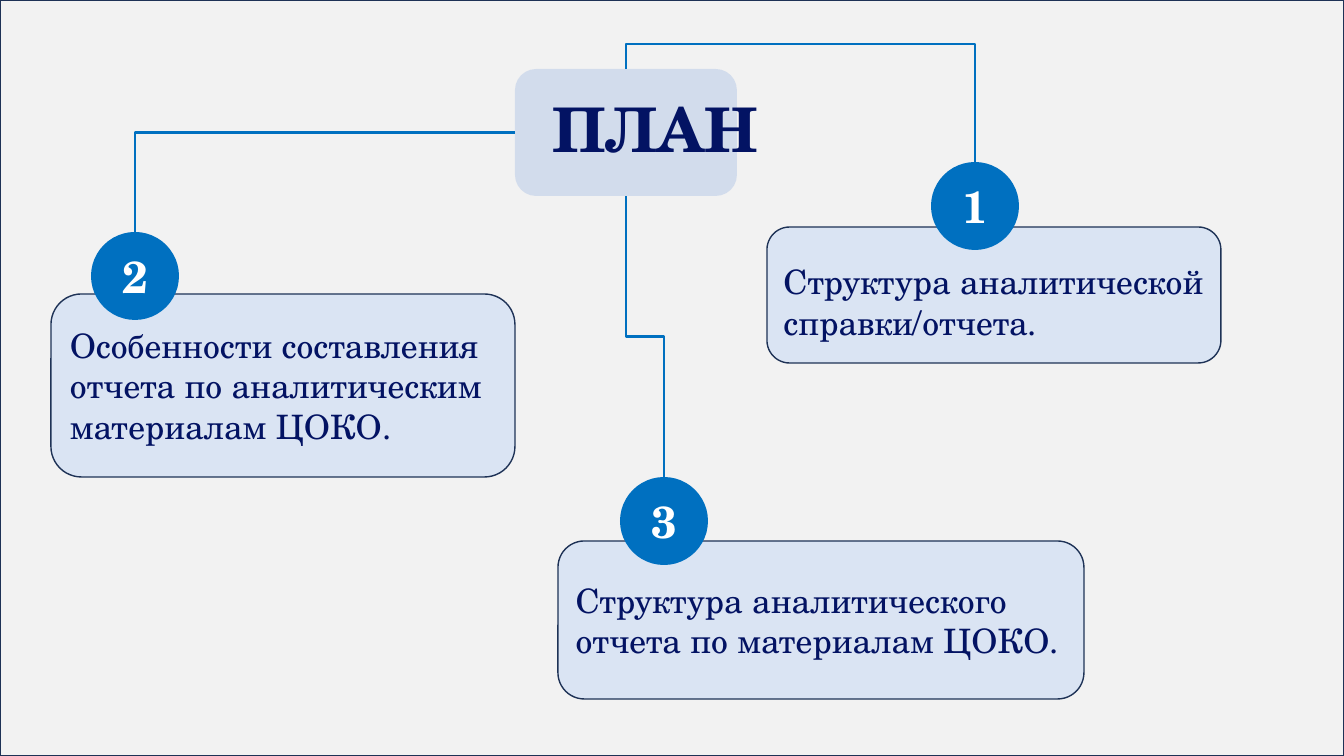
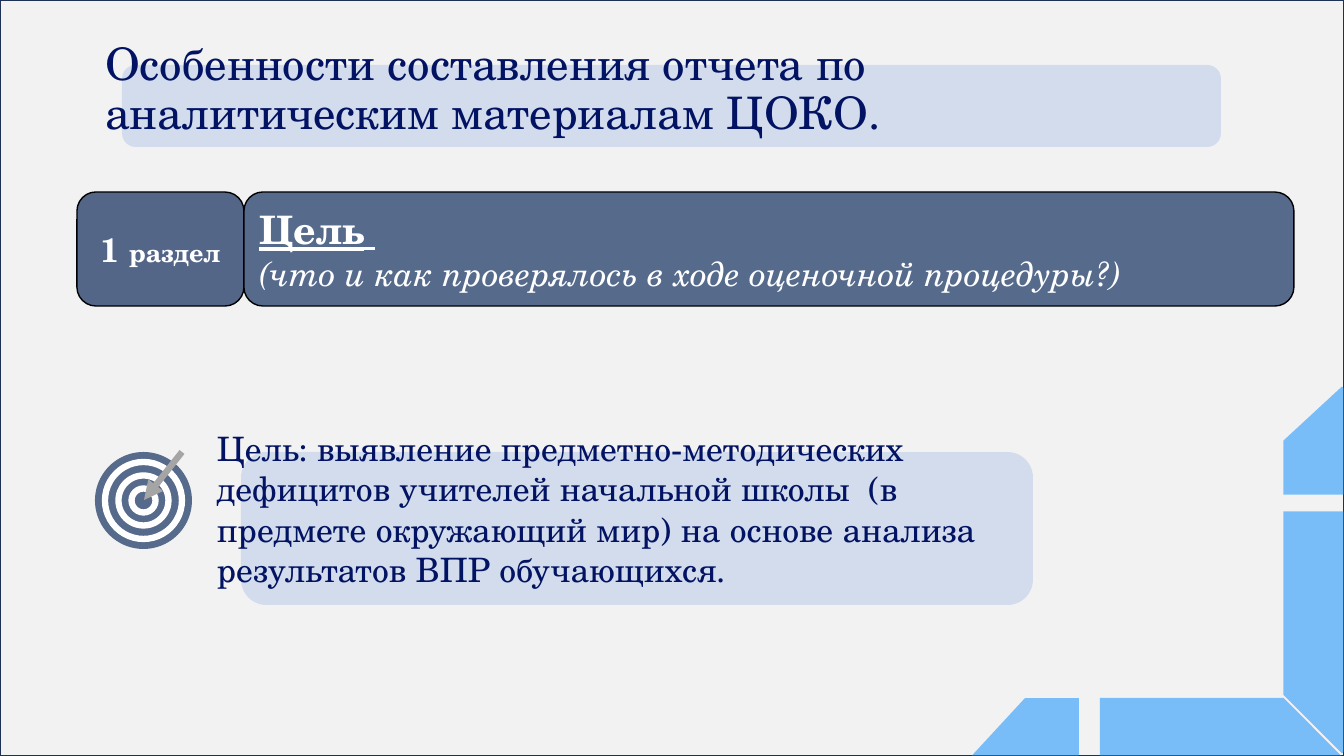
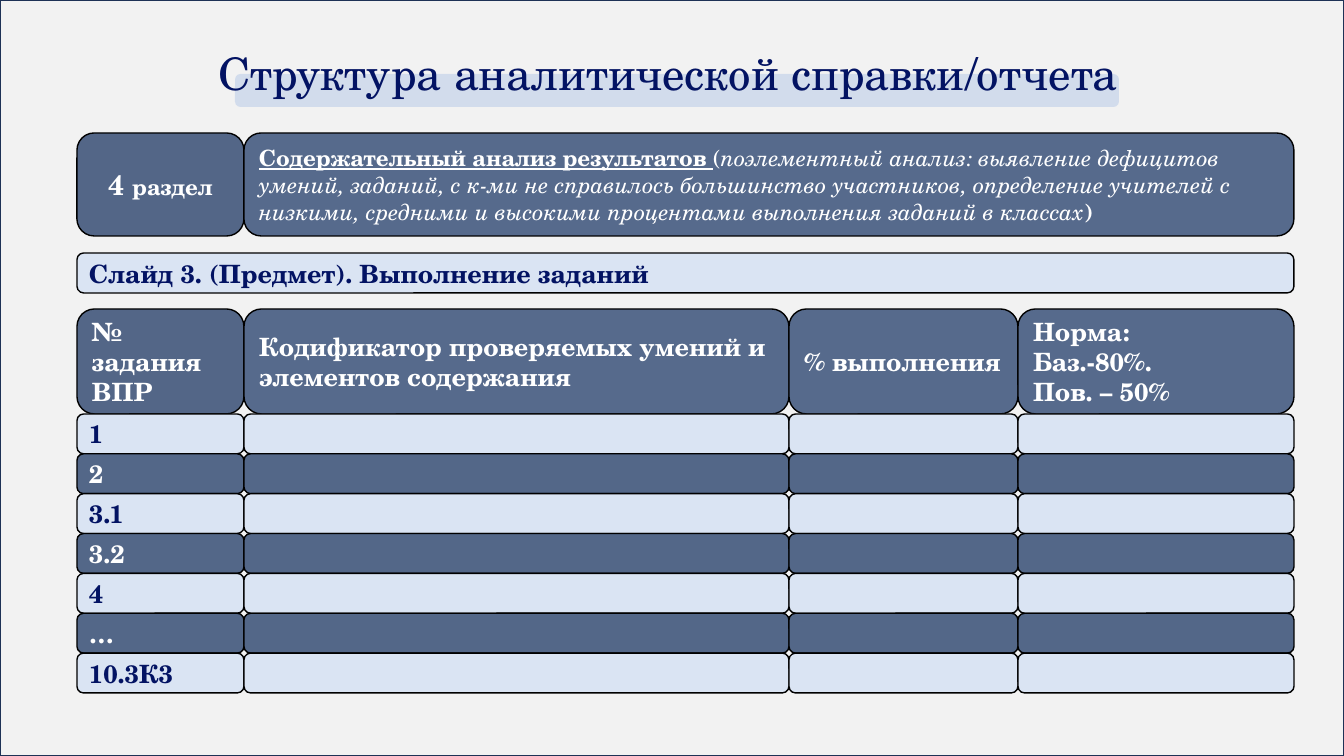
from itertools import pairwise

from lxml.etree import SubElement
from pptx import Presentation
from pptx.dml.color import RGBColor
from pptx.enum.shapes import MSO_CONNECTOR as CONNECTOR, MSO_SHAPE as SHAPE
from pptx.enum.text import MSO_ANCHOR as ANCHOR, MSO_AUTO_SIZE as AUTO_SIZE, PP_ALIGN as ALIGN
from pptx.oxml.ns import qn
from pptx.util import Emu, Pt

PAGE_WIDTH, PAGE_HEIGHT = 1344, 756
EMU_PER_PX = 12192000 / PAGE_WIDTH
FONT = "TeX Gyre Schola"
COLORS = {
    "page": "F2F2F2",
    "frame": "1E3256",
    "band": "B4C7E7",
    "ink": "031363",
    "white": "FFFFFF",
    "black": "000000",
    "blue": "0070C0",
    "corner": "008AFF",
    "pale": "DAE4F3",
    "slate": "566A8C",
    "slate_row": "536788",
    "navy": "1E3864",
    "arrow": "A5A5A5",
}
COLUMN_EDGES = (77, 244, 789, 1018, 1294)


def px(value):
    return Emu(round(value * EMU_PER_PX))


def rgb(name):
    return RGBColor.from_string(COLORS[name])


def write(shape, paragraphs, size=18, color="ink", bold=False, italic=False,
          underline=False, align=ALIGN.LEFT, anchor=ANCHOR.MIDDLE,
          spacing=None, margin_top=5):
    """A paragraph is a string or a list of (text, format changes) runs."""
    frame = shape.text_frame
    frame.word_wrap = True
    frame.auto_size = AUTO_SIZE.NONE
    frame.vertical_anchor = anchor
    frame.margin_top = px(margin_top)
    base = dict(size=size, color=color, bold=bold, italic=italic, underline=underline)
    for index, runs in enumerate(paragraphs):
        paragraph = frame.add_paragraph() if index else frame.paragraphs[0]
        paragraph.alignment = align
        if spacing:
            paragraph.line_spacing = spacing
        for text, changes in [(runs, {})] if isinstance(runs, str) else runs:
            style = base | changes
            run = paragraph.add_run()
            run.text = text
            font = run.font
            font.name = FONT
            font.size = Pt(style["size"])
            font.color.rgb = rgb(style["color"])
            font.bold = style["bold"]
            font.italic = style["italic"]
            font.underline = style["underline"]


def add_box(parent, box, fill=None, line=None, kind=SHAPE.ROUNDED_RECTANGLE,
            opacity=100, line_width=1, rotation=0):
    shape = parent.shapes.add_shape(kind, *map(px, box))
    shape.shadow.inherit = False
    shape.rotation = rotation
    if fill:
        shape.fill.solid()
        shape.fill.fore_color.rgb = rgb(fill)
        if opacity < 100:
            color = shape.element.spPr.find(qn("a:solidFill"))[0]
            SubElement(color, qn("a:alpha"), val=str(opacity * 1000))
    else:
        shape.fill.background()
    if line:
        shape.line.color.rgb = rgb(line)
        shape.line.width = Pt(line_width)
    else:
        shape.line.fill.background()
    return shape


def style_connector(connector, color, width):
    connector.line.color.rgb = rgb(color)
    connector.line.width = Pt(width)
    SubElement(connector.element.spPr, qn("a:effectLst"))


def add_elbow(slide, hub, site, badge, bend=None):
    """Join a side of the hub to the top of a badge; bend is a share of the height."""
    connector = slide.shapes.add_connector(CONNECTOR.ELBOW, 0, 0, 0, 0)
    connector.begin_connect(hub, site)
    connector.end_connect(badge, 0)
    left, top = connector.left, connector.top
    width, height = connector.width, connector.height
    properties = connector.element.spPr
    transform = properties.find(qn("a:xfrm"))
    geometry = properties.find(qn("a:prstGeom"))
    for flip in ("flipH", "flipV"):
        transform.attrib.pop(flip, None)
    if bend is None:
        geometry.set("prst", "bentConnector2")
        transform.set("rot", str(180 * 60000))
        transform.set("flipV", "1")
    else:
        connector.left = Emu(left + (width - height) // 2)
        connector.top = Emu(top + (height - width) // 2)
        connector.width, connector.height = height, width
        transform.set("rot", str(270 * 60000))
        transform.set("flipH", "1")
        SubElement(geometry.find(qn("a:avLst")), qn("a:gd"),
                   name="adj1", fmla=f"val {round(bend * 100000)}")
    style_connector(connector, "blue", 1.5)


def new_slide(presentation, band):
    slide = presentation.slides.add_slide(presentation.slide_layouts[5])
    add_box(slide, (0, 0, PAGE_WIDTH, PAGE_HEIGHT), "page", "frame", SHAPE.RECTANGLE)
    hub = add_box(slide, band, "band", opacity=50)
    return slide, hub


def set_title(slide, box, text, size=32, bold=False):
    title = slide.shapes.title
    title.element.getparent().append(title.element)
    title.left, title.top, title.width, title.height = map(px, box)
    write(title, [text], size=size, bold=bold, spacing=0.9)


def add_section_header(slide, top, height, number, number_size, word_size, paragraphs, size):
    left, middle, *_, right = COLUMN_EDGES
    label = add_box(slide, (left, top, middle - left, height), "navy", "black", opacity=75)
    write(label, [[(f"{number} ", {}), ("раздел", {"size": word_size})]],
          size=number_size, color="white", bold=True, align=ALIGN.CENTER)
    body = add_box(slide, (middle, top, right - middle, height), "slate", "black")
    write(body, paragraphs, size=size, color="white")


def add_target(slide, left, top, size):
    target = slide.shapes.add_group_shape()
    add_box(target, (left, top, size, size), "slate", kind=SHAPE.OVAL)
    for diameter in (77, 50, 24):
        inset = (size - diameter) / 2
        add_box(target, (left + inset, top + inset, diameter, diameter),
                line="white", kind=SHAPE.OVAL, line_width=4.5)
    arrow = slide.shapes.add_connector(
        CONNECTOR.STRAIGHT, px(left + 87), px(top), px(left + 49), px(top + 48))
    style_connector(arrow, "arrow", 4.5)
    SubElement(arrow.line._get_or_add_ln(), qn("a:tailEnd"), type="triangle")


def add_corner(slide):
    """Arrow-shaped plates that run off the bottom right corner."""
    thickness = 117
    for left, top, length, rotation in (
            (1221, 574, 242, 90), (1100, 698, 242, 0),
            (971, 698, 108, 180), (1288, 382, 108, 270)):
        add_box(slide, (left, top, length, thickness), "corner", kind=SHAPE.PENTAGON,
                opacity=50, rotation=rotation)


def add_task_grid(slide, top, header_height, height, headers, labels):
    columns = [(left, right - left) for left, right in pairwise(COLUMN_EDGES)]
    for index, ((left, width), lines) in enumerate(zip(columns, headers)):
        fill, opacity = ("slate", 100) if index else ("navy", 75)
        cell = add_box(slide, (left, top, width, header_height), fill, "black", opacity=opacity)
        write(cell, lines, color="white", bold=True)
    row_height = (height - header_height) / len(labels)
    for row, label in enumerate(labels):
        fill, color = ("slate_row", "white") if row % 2 else ("pale", "ink")
        row_top = top + header_height + row * row_height
        for column, (left, width) in enumerate(columns):
            cell = add_box(slide, (left, row_top, width, row_height), fill, "black")
            if column == 0:
                write(cell, [label], color=color, bold=True)


def build_plan(presentation):
    slide, hub = new_slide(presentation, (515, 69, 222, 127))
    set_title(slide, (542, 59, 243, 147), "ПЛАН", size=44, bold=True)
    topics = (
        ("2", "Особенности составления отчета по аналитическим материалам ЦОКО.",
         (51, 294, 464, 183), (91, 232), 5, 1, None),
        ("3", "Структура аналитического отчета по материалам ЦОКО.",
         (558, 541, 526, 158), (620, 477), 5, 2, 0.5),
        ("1", "Структура аналитической справки/отчета.",
         (767, 227, 454, 136), (931, 162), 18, 0, -0.27),
    )
    for number, text, box, badge_corner, margin_top, site, bend in topics:
        card = add_box(slide, box, "pale", "frame")
        write(card, [text], size=24, margin_top=margin_top)
        badge = add_box(slide, (*badge_corner, 88, 88), "blue", kind=SHAPE.OVAL)
        write(badge, [number], size=32, color="white", bold=True, align=ALIGN.CENTER)
        add_elbow(slide, hub, site, badge, bend)


def build_goal(presentation):
    slide, _ = new_slide(presentation, (122, 65, 1099, 82))
    add_box(slide, (241, 452, 792, 153), "band", opacity=50)
    set_title(slide, (95, 49, 1127, 83),
              "Особенности составления отчета по аналитическим материалам ЦОКО.")
    add_section_header(slide, 192, 114, 1, 24, 18, [
        [("Цель", {"size": 28, "bold": True, "underline": True}),
         (" ", {"size": 28, "underline": True})],
        [("(что и как проверялось в ходе оценочной процедуры?)", {"italic": True})],
    ], 24)
    goal = slide.shapes.add_textbox(*map(px, (207, 423, 812, 173)))
    write(goal, ["Цель: выявление предметно-методических дефицитов учителей начальной "
                 "школы  (в предмете окружающий мир) на основе анализа результатов ВПР "
                 "обучающихся."], size=24, anchor=ANCHOR.TOP)
    add_target(slide, 95, 452, 97)
    add_corner(slide)


def build_results(presentation):
    slide, _ = new_slide(presentation, (235, 74, 884, 33))
    set_title(slide, (208, 35, 929, 83), "Структура аналитической справки/отчета")
    add_section_header(slide, 133, 103, 4, 20, 16, [[
        ("Содержательный анализ результатов ", {"bold": True, "underline": True}),
        ("(", {}),
        ("поэлементный анализ: выявление дефицитов умений, заданий, с к-ми не справилось "
         "большинство участников, определение учителей с низкими, средними и высокими "
         "процентами выполнения заданий в классах", {"italic": True}),
        (")", {"bold": True}),
    ]], 16)
    left, right = COLUMN_EDGES[0], COLUMN_EDGES[-1]
    caption = add_box(slide, (left, 253, right - left, 40), "pale", "black")
    write(caption, ["Слайд 3. (Предмет). Выполнение заданий"], bold=True)
    add_task_grid(
        slide, 309, 105, 384,
        headers=(["№", "задания ВПР"],
                 ["Кодификатор проверяемых умений и", "элементов содержания"],
                 ["% выполнения"],
                 ["Норма:", "Баз.-80%.", "Пов. – 50%"]),
        labels=("1", "2", "3.1", "3.2", "4", "…", "10.3К3"))


def main():
    presentation = Presentation()
    presentation.slide_width = px(PAGE_WIDTH)
    presentation.slide_height = px(PAGE_HEIGHT)
    build_plan(presentation)
    build_goal(presentation)
    build_results(presentation)
    presentation.save("out.pptx")


if __name__ == "__main__":
    main()
